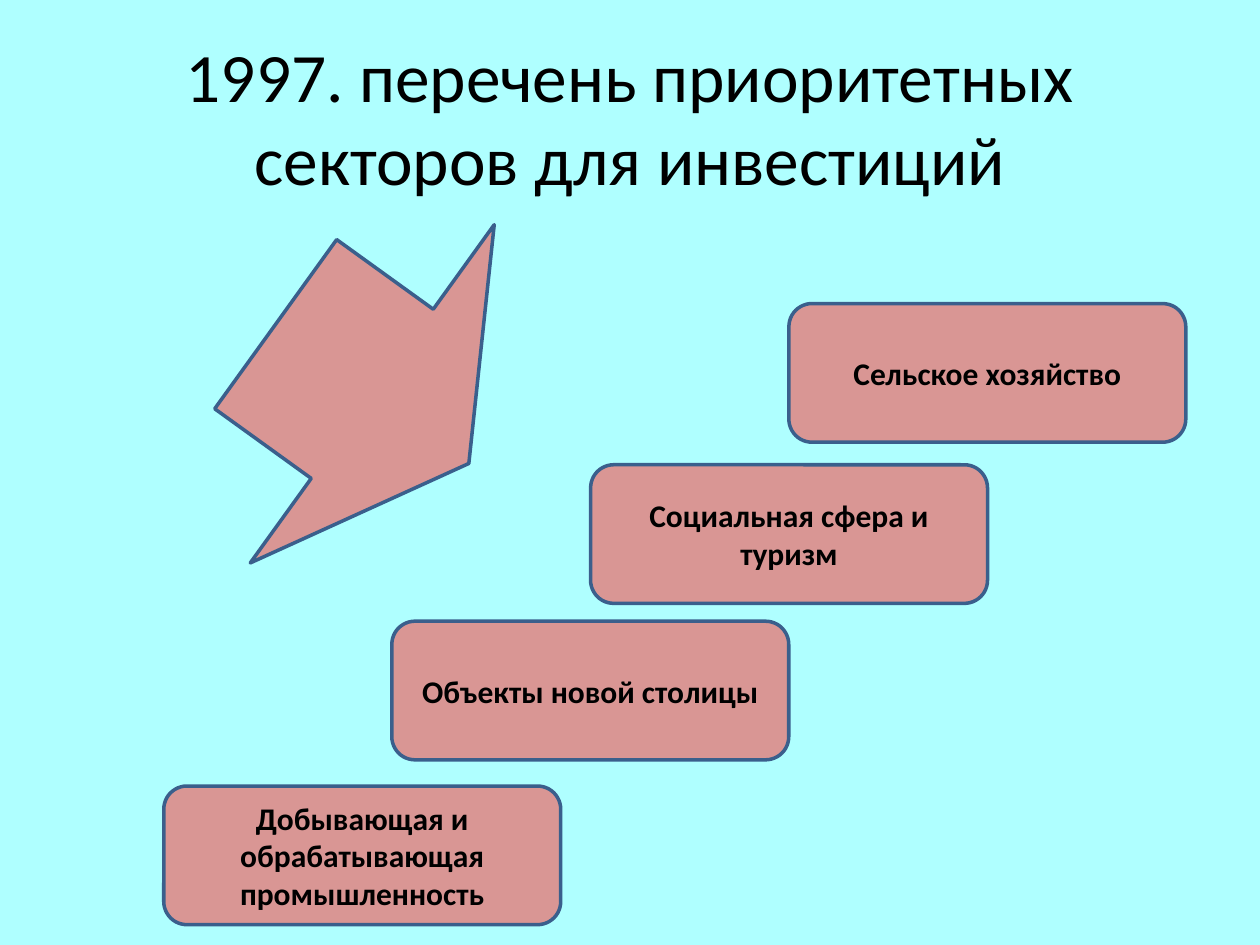
import pptx
import pptx.dml.color
import pptx.enum.shapes
import pptx.enum.text
import pptx.util

Pt = pptx.util.Pt
RGBColor = pptx.dml.color.RGBColor
MSO_SHAPE = pptx.enum.shapes.MSO_SHAPE

AQUA = RGBColor(0xAF, 0xFF, 0xFF)
ROSE = RGBColor(0xD9, 0x96, 0x94)
BLUE = RGBColor(0x3A, 0x5F, 0x8C)
BLACK = RGBColor(0, 0, 0)

SECTOR_W, SECTOR_H = 226.8, 79.2
SECTORS = [
    ("Добывающая и обрабатывающая промышленность", 93.6, 449.2),
    ("Объекты новой столицы", 223.9, 355),
    ("Социальная сфера и туризм", 337.5, 265.6),
    ("Сельское хозяйство", 450.8, 173.5),
]


def set_text(sp, text, size, bold=False):
    tf = sp.text_frame
    tf.word_wrap = True
    tf.vertical_anchor = pptx.enum.text.MSO_ANCHOR.MIDDLE
    p = tf.paragraphs[0]
    p.text = text
    p.alignment = pptx.enum.text.PP_ALIGN.CENTER
    p.font.name = "Calibri"
    p.font.size = Pt(size)
    p.font.bold = bold
    p.font.color.rgb = BLACK


def add_rose_shape(s, kind, left, top, width, height):
    sp = s.shapes.add_shape(kind, Pt(left), Pt(top), Pt(width), Pt(height))
    sp.shadow.inherit = False
    sp.fill.solid()
    sp.fill.fore_color.rgb = ROSE
    sp.line.color.rgb = BLUE
    sp.line.width = Pt(2)
    return sp


prs = pptx.Presentation()
prs.slide_width, prs.slide_height = Pt(720), Pt(540)
s = prs.slides.add_slide(prs.slide_layouts[6])
s.background.fill.solid()
s.background.fill.fore_color.rgb = AQUA

title = s.shapes.add_textbox(Pt(36), Pt(21.6), Pt(648), Pt(90))
set_text(title, "1997. перечень приоритетных секторов для инвестиций", 39.6)

for text, left, top in SECTORS:
    sp = add_rose_shape(s, MSO_SHAPE.ROUNDED_RECTANGLE, left, top, SECTOR_W, SECTOR_H)
    set_text(sp, text, 18, bold=True)

arrow = add_rose_shape(s, MSO_SHAPE.DOWN_ARROW, 93.6, 157, 238.3, 136.1)
arrow.rotation = 305.8

prs.save("out.pptx")
